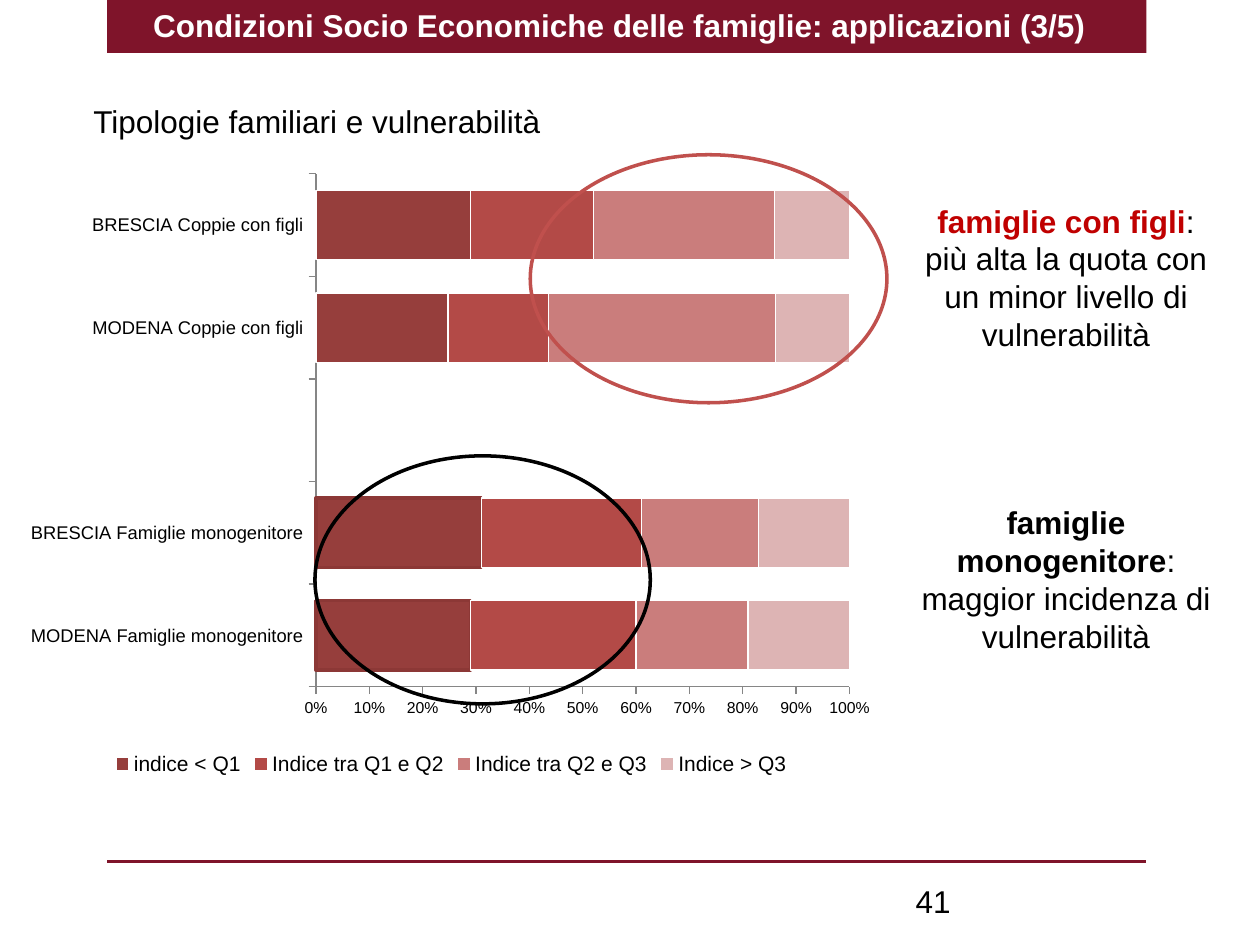
from collections import namedtuple
from dataclasses import dataclass

from lxml.etree import SubElement
from pptx import Presentation
from pptx.chart.data import CategoryChartData
from pptx.dml.color import RGBColor as Rgb
from pptx.enum.chart import XL_CHART_TYPE as ChartType
from pptx.enum.chart import XL_LEGEND_POSITION as LegendPos
from pptx.enum.chart import XL_TICK_MARK as Tick
from pptx.enum.shapes import MSO_CONNECTOR as Connector
from pptx.enum.shapes import MSO_SHAPE as Shape
from pptx.enum.text import PP_ALIGN as Align
from pptx.oxml.ns import qn
from pptx.util import Cm, Pt

Box = namedtuple("Box", "left top width height")


@dataclass(frozen=True)
class Theme:
    """Colours, font and type sizes of the slide."""
    font: str = "Arial"
    burgundy: Rgb = Rgb.from_string("7F142A")
    accent: Rgb = Rgb.from_string("C0504D")
    red: Rgb = Rgb.from_string("C00000")
    black: Rgb = Rgb.from_string("000000")
    white: Rgb = Rgb.from_string("FFFFFF")
    axis: Rgb = Rgb.from_string("868686")
    outline: Rgb = Rgb.from_string("8C3836")
    quartiles: tuple = tuple(map(Rgb.from_string, ("963E3C", "B34A47", "CA7D7C", "DDB4B4")))
    body: float = 18
    legend: float = 12
    categories: float = 10.5
    values: float = 9


THEME = Theme()
FAMILIES = ("MODENA Famiglie monogenitore", "BRESCIA Famiglie monogenitore", "",
            "MODENA Coppie con figli", "BRESCIA Coppie con figli")
SHARES = {
    "indice < Q1": (29, 31, None, 25, 29),
    "Indice tra Q1 e Q2": (31, 30, None, 19, 23),
    "Indice tra Q2 e Q3": (21, 22, None, 43, 34),
    "Indice > Q3": (19, 17, None, 14, 14),
}


def place(box):
    """Turn a box in centimetres into lengths."""
    return tuple(Cm(length) for length in box)


def style_font(font, size=THEME.body, color=THEME.black, bold=False):
    """Set typeface, size, colour and weight of a font."""
    font.name, font.size, font.bold = THEME.font, Pt(size), bold
    font.color.rgb = color


def add_text(slide, box, *paragraphs, align=Align.LEFT, wrap=True, gap=0, **style):
    """Add a text box whose paragraphs are lists of (text, format) runs."""
    frame = slide.shapes.add_textbox(*place(box)).text_frame
    frame.word_wrap = wrap
    for index, runs in enumerate(paragraphs):
        paragraph = frame.add_paragraph() if index else frame.paragraphs[0]
        paragraph.alignment = align
        if index:
            paragraph.space_before = Pt(gap)
        for text, extra in runs:
            run = paragraph.add_run()
            run.text = text
            style_font(run.font, **{**style, **extra})


def add_header(slide, box):
    """Draw the title band and its title."""
    band = slide.shapes.add_shape(Shape.RECTANGLE, *place(box))
    band.shadow.inherit = False
    band.fill.solid()
    band.fill.fore_color.rgb = THEME.burgundy
    band.line.fill.background()
    title = Box(box.left - 0.18, box.top, box.width + 0.07, box.height + 0.05)
    add_text(slide, title, [("Condizioni Socio Economiche delle famiglie: applicazioni (3/5)", {})],
             align=Align.CENTER, color=THEME.white, bold=True)


def add_footer(slide, box):
    """Draw the rule and the slide number under it."""
    rule = slide.shapes.add_connector(
        Connector.STRAIGHT, Cm(box.left), Cm(box.top), Cm(box.left + box.width), Cm(box.top))
    rule.line.color.rgb = THEME.burgundy
    rule.line.width = Pt(2)
    SubElement(rule._element.spPr, qn("a:effectLst"))
    add_text(slide, Box(box.left + 16.05, box.top + 0.28, 5.92, 1.02), [("41", {})])


def add_ellipse(slide, box, color):
    """Ring a part of the chart."""
    ring = slide.shapes.add_shape(Shape.OVAL, *place(box))
    ring.shadow.inherit = False
    ring.fill.background()
    ring.line.color.rgb = color
    ring.line.width = Pt(2)


def set_plot_layout(chart, **fractions):
    """Fix the inner plot area as fractions of the chart."""
    area = chart._chartSpace.chart.plotArea
    for old in area.findall(qn("c:layout")):
        area.remove(old)
    layout = SubElement(area, qn("c:layout"))
    area.insert(0, layout)
    manual = SubElement(layout, qn("c:manualLayout"))
    settings = {"layoutTarget": "inner", "xMode": "edge", "yMode": "edge", **fractions}
    for tag, value in settings.items():
        SubElement(manual, qn(f"c:{tag}")).set("val", str(value))


def style_axis(axis, size):
    """Give an axis its ticks, line and font."""
    axis.has_major_gridlines = False
    axis.major_tick_mark, axis.minor_tick_mark = Tick.OUTSIDE, Tick.NONE
    axis.format.line.color.rgb = THEME.axis
    axis.format.line.width = Pt(0.75)
    style_font(axis.tick_labels.font, size)


def add_shares(slide, box):
    """Draw the stacked shares by family type and ring the key parts."""
    data = CategoryChartData(number_format="General")
    data.categories = FAMILIES
    for name, values in SHARES.items():
        data.add_series(name, values)
    chart = slide.shapes.add_chart(ChartType.BAR_STACKED_100, *place(box), data).chart
    chart.has_title = False
    style_font(chart.font, 10)
    style_axis(chart.category_axis, THEME.categories)
    style_axis(chart.value_axis, THEME.values)
    chart.value_axis.tick_labels.number_format = "0%"
    chart.value_axis.tick_labels.number_format_is_linked = False
    chart.has_legend = True
    chart.legend.position = LegendPos.BOTTOM
    chart.legend.include_in_layout = False
    style_font(chart.legend.font, THEME.legend)
    plot = chart.plots[0]
    plot.gap_width, plot.overlap, plot.vary_by_categories = 48, 100, False
    for series, color in zip(plot.series, THEME.quartiles):
        series.format.fill.solid()
        series.format.fill.fore_color.rgb = color
        series.format.line.color.rgb = THEME.white
        series.format.line.width = Pt(0.75)
    for row in range(2):
        bar = plot.series[0].points[row].format
        bar.fill.solid()
        bar.fill.fore_color.rgb = THEME.quartiles[0]
        bar.line.color.rgb = THEME.outline
        bar.line.width = Pt(2)
    set_plot_layout(chart, x=0.345, y=0.014, w=0.611, h=0.834)
    add_ellipse(slide, Box(box.left + 6.05, box.top + 5.86, 6.76, 5), THEME.black)
    add_ellipse(slide, Box(box.left + 10.39, box.top - 0.21, 7.19, 5), THEME.accent)


def add_comments(slide, box):
    """Write the reading of the two groups of families."""
    add_text(slide, box,
             [("famiglie con figli", {"bold": True, "color": THEME.red}),
              (": più alta la quota con un minor livello di vulnerabilità", {})],
             [("famiglie monogenitore", {"bold": True}),
              (": maggior incidenza di vulnerabilità", {})],
             align=Align.CENTER, gap=86)


def main():
    """Build the slide and save it."""
    deck = Presentation()
    deck.slide_width, deck.slide_height = Cm(25.4), Cm(19.05)
    slide = deck.slides.add_slide(deck.slide_layouts[6])
    add_header(slide, Box(2.16, 0, 20.95, 1.07))
    add_text(slide, Box(1.5, 1.93, 9.78, 1.02), [("Tipologie familiari e vulnerabilità", {})],
             align=Align.CENTER, wrap=False)
    add_shares(slide, Box(0.3, 3.33, 17.6, 12.4))
    add_comments(slide, Box(18.29, 3.94, 6.4, 10.26))
    add_footer(slide, Box(2.16, 17.37, 20.95, 1.3))
    deck.save("out.pptx")


if __name__ == "__main__":
    main()
